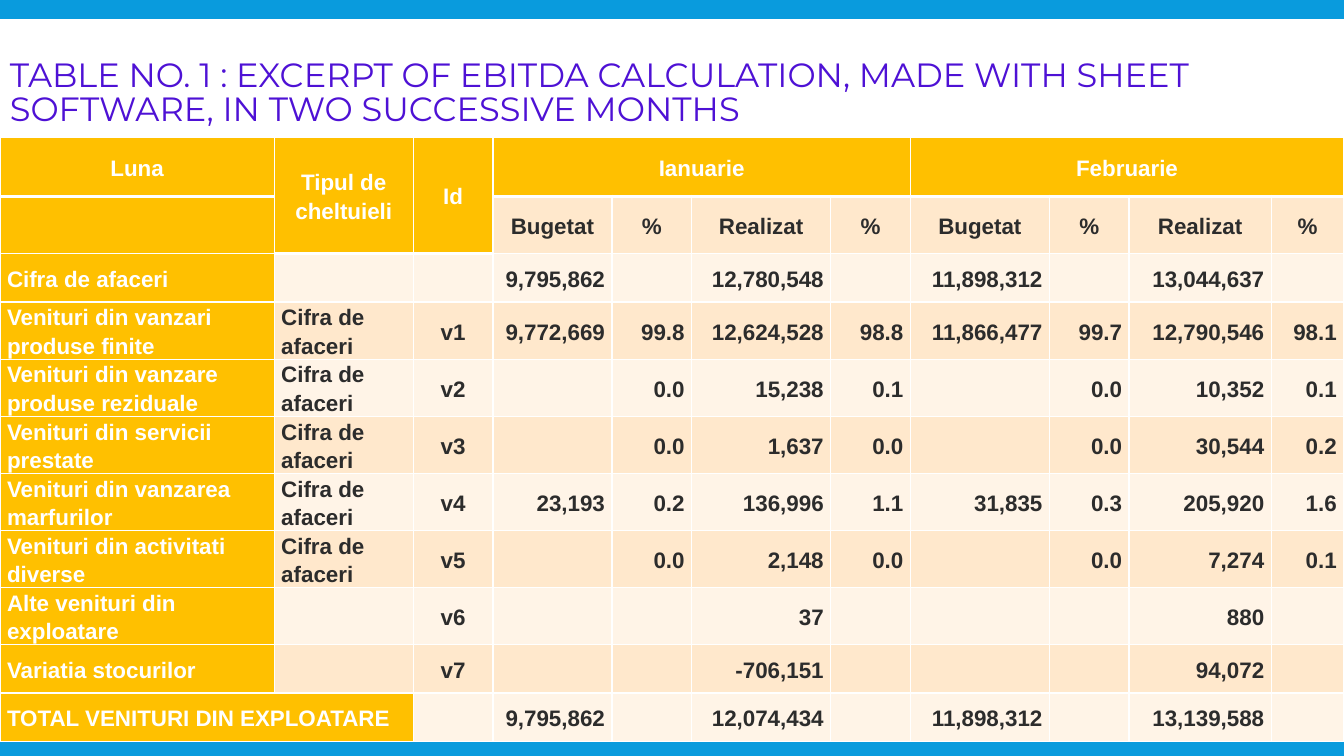
import pptx
import pptx.dml.color
import pptx.enum.shapes
import pptx.enum.text
import pptx.oxml.ns
import pptx.util
from lxml import etree

Inches = pptx.util.Inches
Pt = pptx.util.Pt
RGBColor = pptx.dml.color.RGBColor
ALIGN = pptx.enum.text.PP_ALIGN
MIDDLE = pptx.enum.text.MSO_ANCHOR.MIDDLE

BLUE = RGBColor(0x09, 0x9B, 0xDD)
WHITE = RGBColor(0xFF, 0xFF, 0xFF)
PURPLE = RGBColor(0x4E, 0x11, 0xD5)
GOLD = RGBColor(0xFF, 0xC0, 0x00)
PEACH = RGBColor(0xFF, 0xE8, 0xCC)
CREAM = RGBColor(0xFF, 0xF4, 0xE7)
DARK = RGBColor(0x2C, 0x2C, 0x2C)

TITLE = ("TABLE NO. 1 : EXCERPT OF EBITDA CALCULATION, MADE WITH SHEET "
         "SOFTWARE, IN TWO SUCCESSIVE MONTHS")
COLUMN_WIDTHS = [2.72, 1.38, 0.79, 1.18, 0.79, 1.38, 0.79, 1.38, 0.79, 1.41, 0.72]
ROW_HEIGHTS = [0.59, 0.55] + [0.48] * 9
CELL_LINE_SPACING = Pt(20.4)
TURNOVER = "Cifra de afaceri"
MONTH_HEADINGS = ["Bugetat", "%", "Realizat", "%"]
ROWS = [
    ["Luna", "Tipul de cheltuieli", "Id", "Ianuarie", "", "", "", "Februarie", "", "", ""],
    ["", "", ""] + MONTH_HEADINGS * 2,
    [TURNOVER, "", "", "9,795,862", "", "12,780,548", "", "11,898,312", "", "13,044,637", ""],
    ["Venituri din vanzari produse finite", TURNOVER, "v1",
     "9,772,669", "99.8", "12,624,528", "98.8", "11,866,477", "99.7", "12,790,546", "98.1"],
    ["Venituri din vanzare produse reziduale", TURNOVER, "v2",
     "", "0.0", "15,238", "0.1", "", "0.0", "10,352", "0.1"],
    ["Venituri din servicii prestate", TURNOVER, "v3",
     "", "0.0", "1,637", "0.0", "", "0.0", "30,544", "0.2"],
    ["Venituri din vanzarea marfurilor", TURNOVER, "v4",
     "23,193", "0.2", "136,996", "1.1", "31,835", "0.3", "205,920", "1.6"],
    ["Venituri din activitati diverse", TURNOVER, "v5",
     "", "0.0", "2,148", "0.0", "", "0.0", "7,274", "0.1"],
    ["Alte venituri din exploatare", "", "v6", "", "", "37", "", "", "", "880", ""],
    ["Variatia stocurilor", "", "v7", "", "", "-706,151", "", "", "", "94,072", ""],
    ["TOTAL VENITURI DIN EXPLOATARE", "", "",
     "9,795,862", "", "12,074,434", "", "11,898,312", "", "13,139,588", ""],
]
TOTAL_ROW = len(ROWS) - 1
# First row, first column, last row, last column
MERGES = [(0, 1, 1, 1), (0, 2, 1, 2), (0, 3, 0, 6), (0, 7, 0, 10),
          (TOTAL_ROW, 0, TOTAL_ROW, 1)]


def apply_format(target, values):
    for name, value in values.items():
        setattr(target, name, value)


def write_text(frame, text, font, align, line_spacing):
    para = frame.paragraphs[0]
    apply_format(para, {"alignment": align, "line_spacing": line_spacing})
    span = para.add_run()
    span.text = text
    apply_format(span.font, {name: font[name] for name in ("name", "size", "bold")})
    span.font.color.rgb = font["color"]


def add_panel(page):
    panel = page.shapes.add_shape(
        pptx.enum.shapes.MSO_SHAPE.RECTANGLE,
        Inches(0), Inches(0.19), Inches(13.33), Inches(1.8))
    panel.shadow.inherit = False
    panel.fill.solid()
    panel.fill.fore_color.rgb = WHITE
    panel.line.fill.background()


def add_title(page):
    box = page.shapes.add_textbox(Inches(0), Inches(0.31), Inches(13.33), Inches(1.65))
    apply_format(box.text_frame, {
        "word_wrap": True, "vertical_anchor": MIDDLE, "margin_bottom": Inches(0.45)})
    font = {"name": "Montserrat", "size": Pt(24), "bold": False, "color": PURPLE}
    write_text(box.text_frame, TITLE, font, ALIGN.LEFT, 0.85)


def is_gold(row, column):
    return (row == 0 or column == 0 or (row == 1 and column < 3)
            or (row == TOTAL_ROW and column == 1))


def cell_align(row, column):
    if row < 2 or column == 2:
        return ALIGN.CENTER
    return ALIGN.LEFT if column < 2 else ALIGN.RIGHT


def is_thick_below(row, column):
    """Tell whether the header rule runs under this cell."""
    if column in (1, 2):
        return row == 1
    return row == 0


def add_borders(cell, row, column):
    """Add white borders; call before the fill, which must follow them in the XML."""
    widths = {
        "lnL": 1, "lnR": 1,
        "lnT": 3 if is_thick_below(row - 1, column) else 1,
        "lnB": 3 if is_thick_below(row, column) else 1,
    }
    properties = cell._tc.get_or_add_tcPr()
    qn = pptx.oxml.ns.qn
    for side, width in widths.items():
        line = etree.SubElement(properties, qn("a:" + side), w=str(Pt(width)))
        fill = etree.SubElement(line, qn("a:solidFill"))
        etree.SubElement(fill, qn("a:srgbClr"), val=str(WHITE))


def format_cell(cell, row, column, text):
    gold = is_gold(row, column)
    add_borders(cell, row, column)
    cell.fill.solid()
    cell.fill.fore_color.rgb = GOLD if gold else (PEACH if row % 2 else CREAM)
    apply_format(cell, {
        "vertical_anchor": MIDDLE, "margin_left": Inches(0.07),
        "margin_right": Inches(0.07), "margin_top": 0, "margin_bottom": 0})
    if text:
        font = {"name": "Arial", "size": Pt(16), "bold": True,
                "color": WHITE if gold else DARK}
        write_text(cell.text_frame, text, font, cell_align(row, column),
                   CELL_LINE_SPACING)


def add_ebitda_table(page):
    table = page.shapes.add_table(
        len(ROWS), len(COLUMN_WIDTHS), Inches(0), Inches(1.36),
        Inches(sum(COLUMN_WIDTHS)), Inches(sum(ROW_HEIGHTS))).table
    for column, width in zip(table.columns, COLUMN_WIDTHS):
        column.width = Inches(width)
    for row, height in zip(table.rows, ROW_HEIGHTS):
        row.height = Inches(height)
    for top, left, bottom, right in MERGES:
        table.cell(top, left).merge(table.cell(bottom, right))
    for row, texts in enumerate(ROWS):
        for column, text in enumerate(texts):
            format_cell(table.cell(row, column), row, column, text)


def main():
    deck = pptx.Presentation()
    apply_format(deck, {"slide_width": Inches(13.33), "slide_height": Inches(7.5)})
    page = deck.slides.add_slide(deck.slide_layouts[6])
    page.background.fill.solid()
    page.background.fill.fore_color.rgb = BLUE
    add_panel(page)
    add_title(page)
    add_ebitda_table(page)
    deck.save("out.pptx")


if __name__ == "__main__":
    main()
